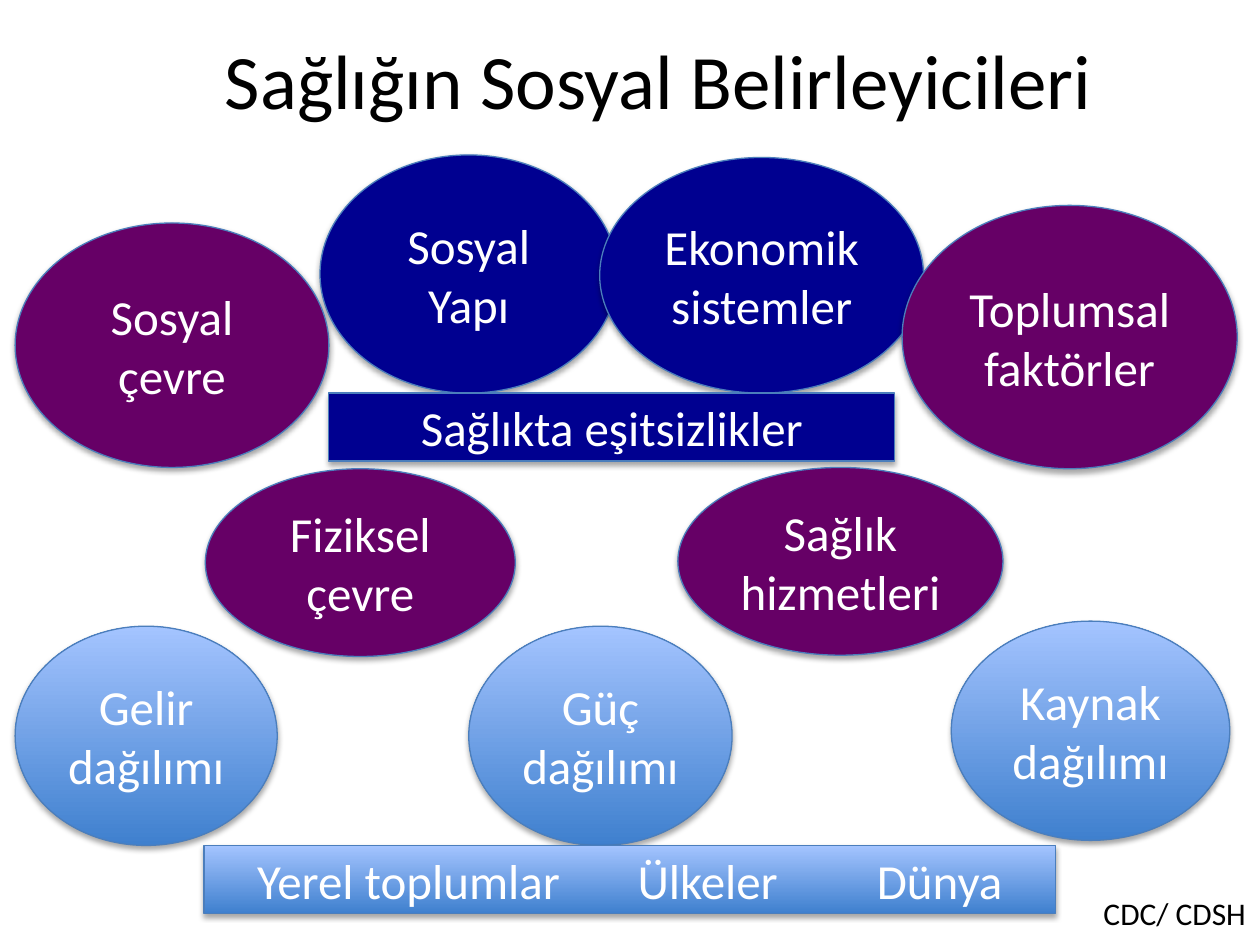
"""Builds a one-slide diagram of the social determinants of health."""
import lxml.etree
import pptx
import pptx.dml.color
import pptx.enum.shapes
import pptx.enum.text
import pptx.oxml.ns
import pptx.util

Inches = pptx.util.Inches
Align = pptx.enum.text.PP_ALIGN
Anchor = pptx.enum.text.MSO_ANCHOR
Kind = pptx.enum.shapes.MSO_SHAPE

COLORS = {"navy": "000090", "purple": "660066", "sky_bottom": "3F80CE", "sky_top": "A4C4FF",
          "outline": "4B7EBC", "white": "FFFFFF", "black": "000000"}

TITLE = ("Sağlığın Sosyal Belirleyicileri", (0.73, 0, 9, 1.25))
SOURCE = ("CDC/ CDSH", (8.66, 7.05, 1.34, 0.4))
SHAPES = [
    ("Sosyal Yapı", Kind.OVAL, "navy", (2.54, 1.23, 2.36, 1.89)),
    ("Ekonomik sistemler", Kind.OVAL, "navy", (4.76, 1.25, 2.57, 1.87)),
    ("Sağlıkta eşitsizlikler", Kind.RECTANGLE, "navy", (2.61, 3.12, 4.49, 0.54)),
    ("Sosyal çevre", Kind.OVAL, "purple", (0.12, 1.77, 2.49, 1.94)),
    ("Fiziksel çevre", Kind.OVAL, "purple", (1.63, 3.72, 2.46, 1.49)),
    ("Sağlık hizmetleri", Kind.OVAL, "purple", (5.38, 3.71, 2.58, 1.49)),
    ("Toplumsal faktörler", Kind.OVAL, "purple", (7.16, 1.63, 2.66, 2.09)),
    ("Gelir dağılımı", Kind.OVAL, "sky", (0.12, 4.97, 2.08, 1.74)),
    ("Güç dağılımı", Kind.OVAL, "sky", (3.72, 4.97, 2.09, 1.74)),
    ("Kaynak dağılımı", Kind.OVAL, "sky", (7.55, 4.93, 2.21, 1.74)),
]
LEVELS = ["Yerel toplumlar", "Ülkeler", "Dünya"]
LEVELS_AT = (1.62, 6.71, 6.76, 0.54)
LEVELS_INDENT = 0.42
LEVELS_TABS = [3.02, 4.92]


def rgb(name):
    return pptx.dml.color.RGBColor.from_string(COLORS[name])


def write(shape, text, size=28, color="white", align=Align.CENTER, anchor=Anchor.MIDDLE, wrap=True):
    frame = shape.text_frame
    frame.word_wrap = wrap
    frame.vertical_anchor = anchor
    para = frame.paragraphs[0]
    para.alignment = align
    span = para.add_run()
    span.text = text
    span.font.size = pptx.util.Pt(size)
    span.font.name = "Calibri"
    span.font.color.rgb = rgb(color)
    return para


def add_shadow(shape):
    shape.shadow.inherit = False
    qn = pptx.oxml.ns.qn
    effects = shape.element.spPr.find(qn("a:effectLst"))
    shadow = lxml.etree.SubElement(effects, qn("a:outerShdw"), blurRad="40000", dist="23000",
                                   dir="5400000", rotWithShape="0")
    color = lxml.etree.SubElement(shadow, qn("a:srgbClr"), val=COLORS["black"])
    lxml.etree.SubElement(color, qn("a:alpha"), val="35000")


def add_figure(page, kind, fill, at):
    shape = page.shapes.add_shape(kind, *map(Inches, at))
    if fill == "sky":
        shape.fill.gradient()
        shape.fill.gradient_angle = 90
        for stop, position, name in zip(shape.fill.gradient_stops, (0, 1), ("sky_bottom", "sky_top")):
            stop.position = position
            stop.color.rgb = rgb(name)
    else:
        shape.fill.solid()
        shape.fill.fore_color.rgb = rgb(fill)
    shape.line.color.rgb = rgb("outline")
    shape.line.width = pptx.util.Pt(0.75)
    add_shadow(shape)
    return shape


def add_levels(page):
    bar = add_figure(page, Kind.RECTANGLE, "sky", LEVELS_AT)
    bar.text_frame.margin_left = Inches(LEVELS_INDENT)
    para = write(bar, "\t".join(LEVELS), align=Align.LEFT)
    qn = pptx.oxml.ns.qn
    tabs = lxml.etree.SubElement(para._p.get_or_add_pPr(), qn("a:tabLst"))
    for position in LEVELS_TABS:
        lxml.etree.SubElement(tabs, qn("a:tab"), pos=str(Inches(position)), algn="l")


def main():
    deck = pptx.Presentation()
    deck.slide_width, deck.slide_height = Inches(10), Inches(7.5)
    page = deck.slides.add_slide(deck.slide_layouts[6])
    text, at = TITLE
    write(page.shapes.add_textbox(*map(Inches, at)), text, size=44, color="black")
    for text, kind, fill, at in SHAPES:
        write(add_figure(page, kind, fill, at), text)
    add_levels(page)
    text, at = SOURCE
    write(page.shapes.add_textbox(*map(Inches, at)), text, size=18, color="black",
          align=Align.LEFT, anchor=Anchor.TOP, wrap=False)
    deck.save("out.pptx")


if __name__ == "__main__":
    main()
